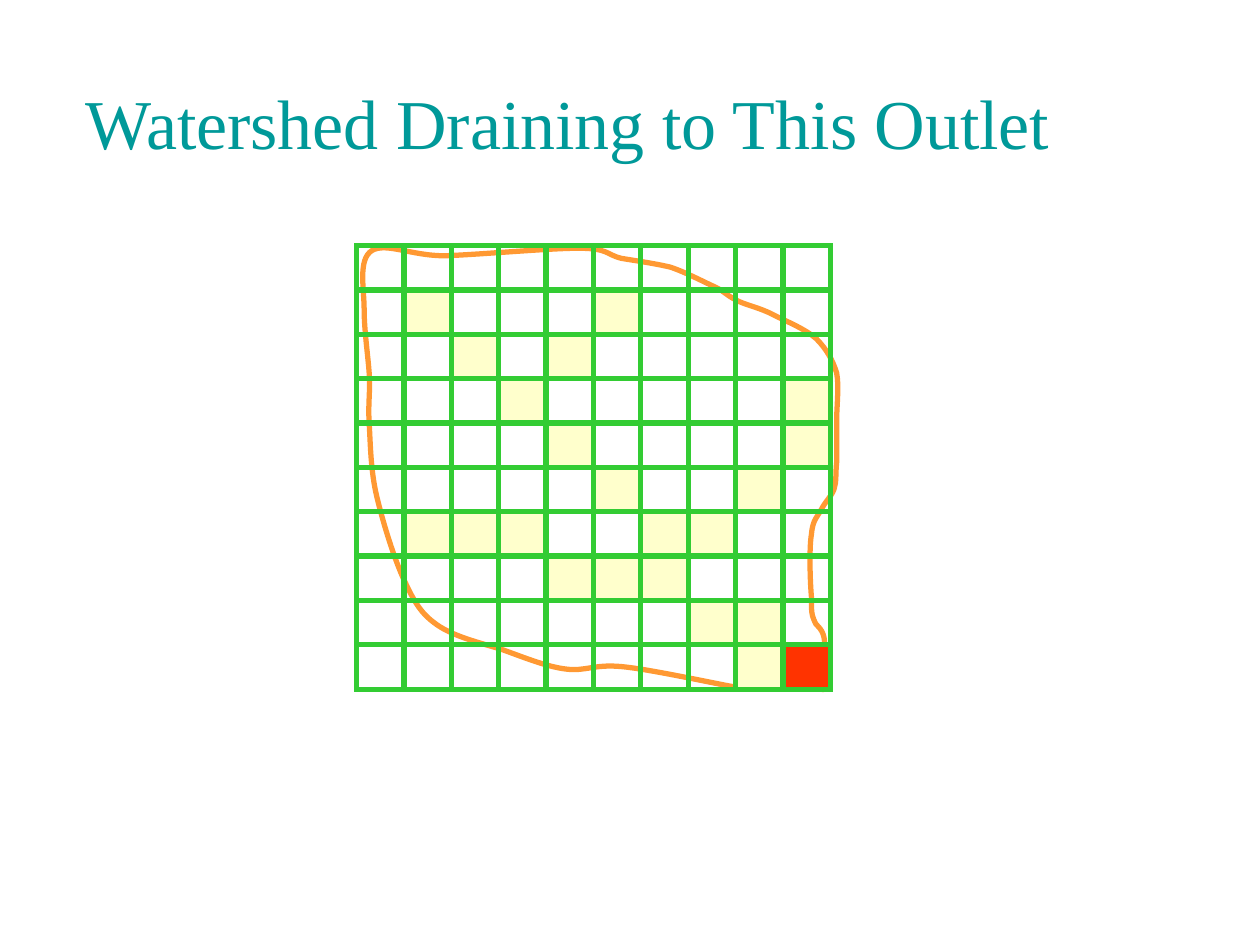
from lxml import etree
from pptx import Presentation
from pptx.dml.color import RGBColor
from pptx.enum import shapes, text
from pptx.oxml import ns
from pptx.util import Inches, Pt

TEAL = RGBColor(0x00, 0x99, 0x99)
GREEN = RGBColor(0x33, 0xCC, 0x33)
ORANGE = RGBColor(0xFF, 0x99, 0x33)
FILLS = {"s": RGBColor(0xFF, 0xFF, 0xCC), "o": RGBColor(0xFF, 0x33, 0x00)}

GRID_LEFT, GRID_TOP, GRID_WIDTH, GRID_HEIGHT = 2.83, 1.95, 3.76, 3.52
CELLS = [
    "..........",
    ".s...s....",
    "..s.s.....",
    "...s.....s",
    "....s....s",
    ".....s..s.",
    ".sss..ss..",
    "....sss...",
    ".......ss.",
    "........so",
]

BOUNDARY_START = (5.82, 5.45)
BOUNDARY_CURVES = [
    (5.65, 5.42, 5.15, 5.31, 4.93, 5.29), (4.71, 5.27, 4.65, 5.33, 4.49, 5.31),
    (4.33, 5.29, 4.14, 5.21, 3.97, 5.15), (3.8, 5.1, 3.6, 5.05, 3.47, 4.96),
    (3.34, 4.87, 3.29, 4.78, 3.21, 4.61), (3.13, 4.44, 3.04, 4.15, 2.99, 3.94),
    (2.94, 3.73, 2.94, 3.52, 2.93, 3.36), (2.92, 3.19, 2.94, 3.11, 2.93, 2.96),
    (2.92, 2.82, 2.89, 2.62, 2.89, 2.46), (2.89, 2.29, 2.84, 2.06, 2.95, 1.99),
    (3.06, 1.92, 3.26, 2.03, 3.53, 2.03), (3.81, 2.02, 4.36, 1.97, 4.59, 1.97),
    (4.83, 1.97, 4.81, 2.02, 4.93, 2.05), (5.05, 2.07, 5.19, 2.09, 5.32, 2.12),
    (5.44, 2.16, 5.59, 2.24, 5.68, 2.28), (5.76, 2.32, 5.76, 2.34, 5.84, 2.38),
    (5.91, 2.42, 6.03, 2.44, 6.14, 2.5), (6.24, 2.55, 6.39, 2.61, 6.48, 2.69),
    (6.56, 2.77, 6.61, 2.86, 6.64, 2.96), (6.66, 3.07, 6.64, 3.22, 6.64, 3.34),
    (6.64, 3.45, 6.64, 3.58, 6.64, 3.67), (6.63, 3.76, 6.64, 3.82, 6.62, 3.88),
    (6.6, 3.94, 6.55, 3.98, 6.52, 4.04), (6.49, 4.1, 6.45, 4.12, 6.44, 4.24),
    (6.42, 4.35, 6.43, 4.63, 6.44, 4.74), (6.44, 4.86, 6.44, 4.87, 6.46, 4.92),
    (6.47, 4.97, 6.52, 4.97, 6.54, 5.06), (6.55, 5.14, 6.58, 5.39, 6.56, 5.45),
    (6.53, 5.51, 6.48, 5.43, 6.38, 5.43), (6.27, 5.43, 6.03, 5.45, 5.94, 5.45),
    (5.84, 5.45, 5.98, 5.47, 5.82, 5.45),
]


def write_text(tf, content, *, font, size, color, align=text.PP_ALIGN.LEFT):
    """Put one formatted run into a text frame."""
    p = tf.paragraphs[0]
    p.alignment = align
    r = p.add_run()
    r.text = content
    r.font.name = font
    r.font.size = Pt(size)
    r.font.color.rgb = color


def style_shape(sp, line, fill=None):
    """Give a shape a mitred 3 pt outline, an optional fill and no shadow."""
    sp.shadow.inherit = False
    sp.line.color.rgb = line
    sp.line.width = Pt(3)
    ln = sp._element.spPr.find(ns.qn("a:ln"))
    etree.SubElement(ln, ns.qn("a:miter"), lim="800000")
    if fill is None:
        sp.fill.background()
    else:
        sp.fill.solid()
        sp.fill.fore_color.rgb = fill


def add_curve(group, start, curves):
    """Add a closed outline of cubic Bezier curves."""
    builder = group.shapes.build_freeform(*map(Inches, start))
    builder.add_line_segments(
        [(Inches(c[i]), Inches(c[i + 1])) for c in curves for i in (0, 2, 4)], close=True)
    sp = builder.convert_to_shape()
    segments = list(sp._element.iter(ns.qn("a:lnTo")))
    for i in range(0, len(segments), 3):
        curve = etree.Element(ns.qn("a:cubicBezTo"))
        segments[i].addprevious(curve)
        for segment in segments[i:i + 3]:
            curve.append(segment[0])
            segment.getparent().remove(segment)
    return sp


def add_title(slide, content):
    """Place and fill the slide title."""
    title = slide.shapes.title
    title.left, title.top = Inches(0.58), Inches(0.58)
    title.width, title.height = Inches(7.92), Inches(0.77)
    tf = title.text_frame
    tf.word_wrap = False
    tf.auto_size = text.MSO_AUTO_SIZE.SHAPE_TO_FIT_TEXT
    tf.vertical_anchor = text.MSO_ANCHOR.TOP
    write_text(tf, content, font="Times New Roman", size=40, color=TEAL)


def add_grid(group):
    """Draw the raster cells, with stream and outlet cells filled."""
    height = GRID_HEIGHT / len(CELLS)
    width = GRID_WIDTH / len(CELLS[0])
    for row, codes in enumerate(CELLS):
        for col, code in enumerate(codes):
            cell = group.shapes.add_shape(
                shapes.MSO_SHAPE.RECTANGLE,
                Inches(GRID_LEFT + col * width), Inches(GRID_TOP + row * height),
                Inches(width), Inches(height))
            style_shape(cell, GREEN, FILLS.get(code))


def main():
    """Build and save the slide."""
    prs = Presentation()
    prs.slide_width, prs.slide_height = Inches(10), Inches(7.5)
    slide = prs.slides.add_slide(prs.slide_layouts[5])
    add_title(slide, "Watershed Draining to This Outlet")
    watershed = slide.shapes.add_group_shape()
    style_shape(add_curve(watershed, BOUNDARY_START, BOUNDARY_CURVES), ORANGE)
    add_grid(watershed)
    prs.save("out.pptx")


if __name__ == "__main__":
    main()
